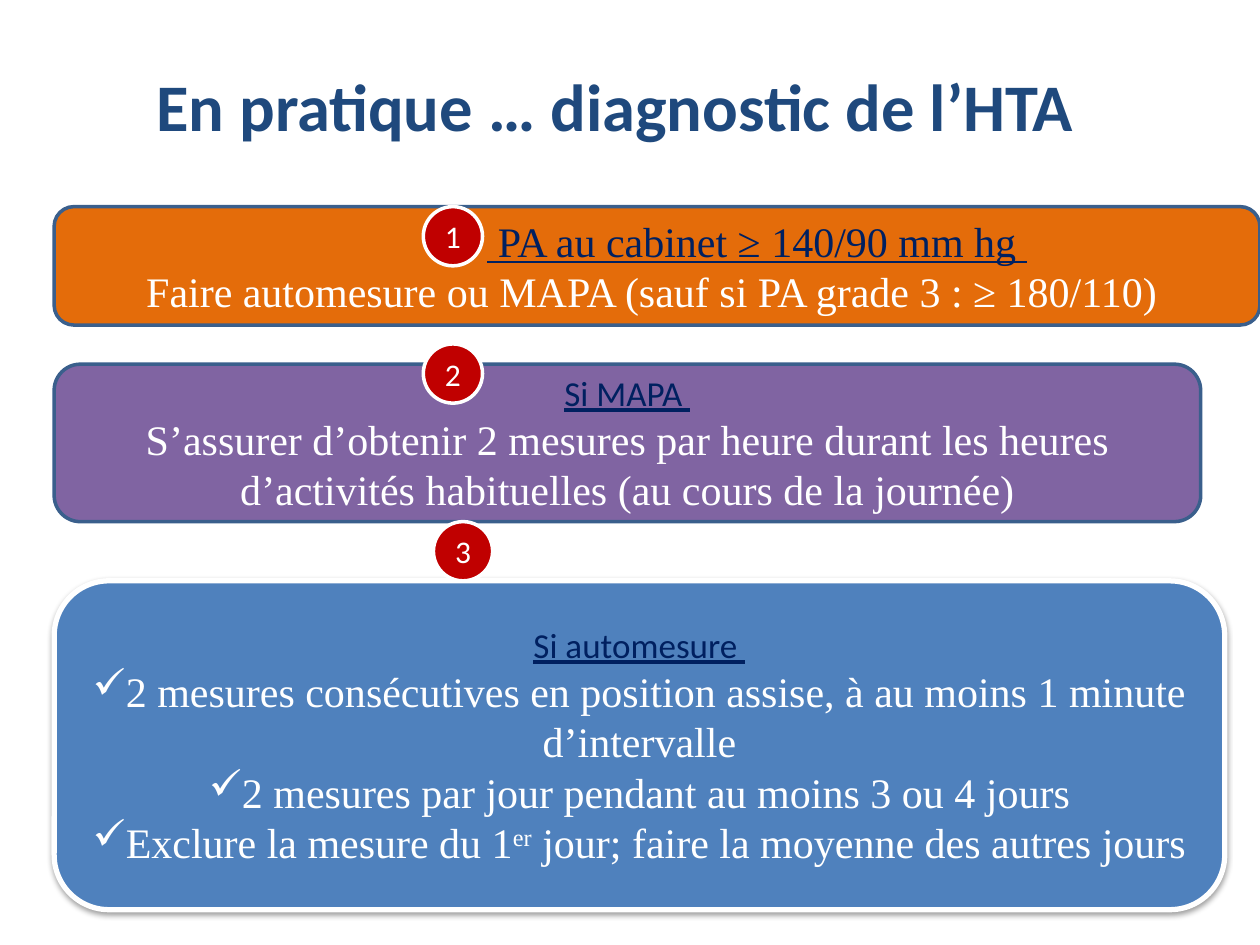
from pptx import Presentation
from pptx import util as u
from pptx.dml.color import RGBColor
from pptx.enum import shapes, text
from pptx.oxml import parse_xml
from pptx.oxml.ns import nsdecls
from lxml import etree

NAVY = RGBColor(0x1F, 0x49, 0x7D)
INK = RGBColor(0x00, 0x20, 0x60)
WHITE = RGBColor(0xFF, 0xFF, 0xFF)
EDGE = RGBColor(0x3A, 0x5F, 0x8C)
ORANGE = RGBColor(0xE4, 0x6C, 0x0A)
PURPLE = RGBColor(0x80, 0x64, 0xA2)
BLUE = RGBColor(0x4F, 0x81, 0xBD)
RED = RGBColor(0xC0, 0x00, 0x00)
SERIF, SANS = "Times New Roman", "Calibri"
CENTER, LEFT = text.PP_ALIGN.CENTER, text.PP_ALIGN.LEFT
A = "{http://schemas.openxmlformats.org/drawingml/2006/main}"


def write(par, words, size=24, face=SERIF, color=WHITE, bold=False, line=False,
          align=CENTER, bullet=None, indent=0, base=0):
    """Add one formatted run to a paragraph."""
    par.alignment = align
    props = par._p.get_or_add_pPr()
    if indent:
        props.set("marL", str(u.Inches(indent)))
    if bullet:
        props.set("marL", "0")
        props.set("indent", "0")
        etree.SubElement(props, A + "buChar", char=bullet)
    run = par.add_run()
    run.text = words
    font = run.font
    font.size, font.name, font.bold, font.underline = u.Pt(size), face, bold, line
    font.color.rgb = color
    if base:
        font._element.set("baseline", str(base * 1000))


def draw(kind, box, fill, edge, width):
    """Add a filled, outlined shape without shadow."""
    shape = slide.shapes.add_shape(kind, *[u.Inches(n) for n in box])
    shape.shadow.inherit = False
    shape.fill.solid()
    shape.fill.fore_color.rgb = fill
    shape.line.color.rgb = edge
    shape.line.width = u.Pt(width)
    shape.text_frame.word_wrap = True
    shape.text_frame.vertical_anchor = text.MSO_ANCHOR.MIDDLE
    return shape


deck = Presentation()
deck.slide_width, deck.slide_height = u.Inches(10), u.Inches(7.5)
slide = deck.slides.add_slide(deck.slide_layouts[5])

# Title
title = slide.shapes.title
title.left, title.top, title.width, title.height = [
    u.Inches(n) for n in (1.14, 0.36, 8.2, 0.95)]
title.text_frame.vertical_anchor = text.MSO_ANCHOR.MIDDLE
write(title.text_frame.paragraphs[0], "En pratique … diagnostic de l’HTA",
      size=38, face=SANS, color=NAVY, bold=True, align=LEFT)

# Step panels: top, width, height, fill, edge, line width, heading, format, body
side = 0.43
small = dict(size=20, face=SANS)
steps = [
    (1.64, 9.57, 0.94, ORANGE, EDGE, 2, " PA au cabinet ≥ 140/90 mm hg ",
     dict(indent=1.59),
     ["Faire automesure ou MAPA (sauf si PA grade 3 : ≥ 180/110) "], None),
    (2.89, 9.1, 1.25, PURPLE, EDGE, 2, "Si MAPA ", small,
     ["S’assurer d’obtenir 2 mesures par heure durant les heures "
      "d’activités habituelles (au cours de la journée)"], None),
    (4.61, 9.29, 2.61, BLUE, WHITE, 3, "Si automesure ", small,
     ["2 mesures consécutives en position assise, à au moins 1 minute d’intervalle",
      "2 mesures par jour pendant au moins 3 ou 4 jours",
      "Exclure la mesure du 1"], "✓"),
]
for top, wide, high, fill, edge, width, head, form, body, mark in steps:
    panel = draw(shapes.MSO_SHAPE.ROUNDED_RECTANGLE, (side, top, wide, high),
                 fill, edge, width)
    frame = panel.text_frame
    write(frame.paragraphs[0], head, color=INK, line=True, **form)
    for words in body:
        write(frame.add_paragraph(), words, bullet=mark)

# The last panel ends with an ordinal and has a soft shadow
last = frame.paragraphs[-1]
write(last, "er", base=30)
write(last, " jour; faire la moyenne des autres jours")
glow = panel._element.spPr.find(A + "effectLst")
glow.append(parse_xml(
    f'<a:outerShdw {nsdecls("a")} blurRad="{u.Pt(3.1)}" dist="{u.Pt(1.6)}" '
    'dir="5400000" rotWithShape="0"><a:srgbClr val="000000">'
    '<a:alpha val="38000"/></a:srgbClr></a:outerShdw>'))

# Numbered badges
size = 0.47
for num, (left, top) in enumerate([(3.36, 1.64), (3.36, 2.73), (3.44, 4.14)], 1):
    badge = draw(shapes.MSO_SHAPE.OVAL, (left, top, size, size), RED, WHITE, 2)
    write(badge.text_frame.paragraphs[0], str(num), size=18, face=SANS)

deck.save("out.pptx")
